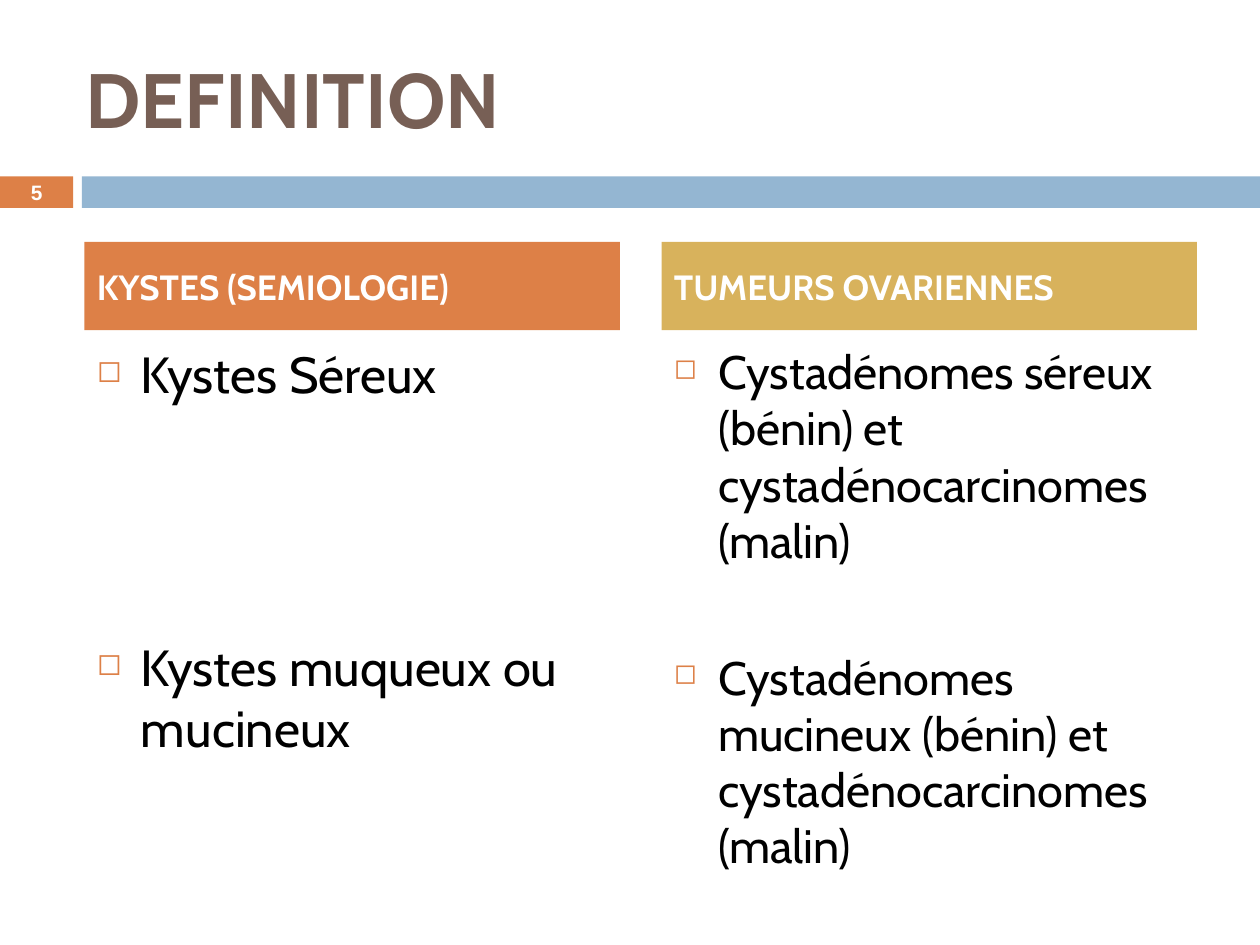
from lxml import etree
from pptx import Presentation
from pptx.dml.color import RGBColor
from pptx.enum.shapes import MSO_SHAPE as Shape
from pptx.enum.text import MSO_ANCHOR as Anchor, PP_ALIGN as Align
from pptx.oxml.ns import qn
from pptx.util import Inches, Pt

ORANGE, BLUE, GOLD = "DD8047", "94B6D2", "D8B25C"
BROWN, BLACK, WHITE = "775F55", "000000", "FFFFFF"

# Heading, heading colour, text size, gap before the second item, items
COLUMNS = [
    ("KYSTES (SEMIOLOGIE)", ORANGE, 29, 132.5,
     ["Kystes Séreux", "Kystes muqueux ou mucineux"]),
    ("TUMEURS OVARIENNES", GOLD, 26.8, 46,
     ["Cystadénomes séreux (bénin) et cystadénocarcinomes (malin)",
      "Cystadénomes mucineux (bénin) et cystadénocarcinomes (malin)"]),
]


def color(hex_code):
    return RGBColor.from_string(hex_code)


def add_bar(slide, left, top, width, height, fill):
    bar = slide.shapes.add_shape(Shape.RECTANGLE, Inches(left), Inches(top),
                                 Inches(width), Inches(height))
    bar.shadow.inherit = False
    bar.fill.solid()
    bar.fill.fore_color.rgb = color(fill)
    bar.line.fill.background()
    return bar


def add_box(slide, left, top, width, height):
    return slide.shapes.add_textbox(Inches(left), Inches(top),
                                    Inches(width), Inches(height))


def write(holder, lines, size, ink, bold=False, font="Cabin",
          anchor=Anchor.MIDDLE, align=Align.LEFT):
    frame = holder.text_frame
    frame.word_wrap = True
    frame.vertical_anchor = anchor
    frame.text = "\n".join(lines)
    for paragraph in frame.paragraphs:
        paragraph.alignment = align
        paragraph.font.name = font
        paragraph.font.size = Pt(size)
        paragraph.font.bold = bold
        paragraph.font.color.rgb = color(ink)
    return frame.paragraphs


def add_bullet(paragraph):
    props = paragraph._p.get_or_add_pPr()
    props.set("marL", str(Inches(0.35)))
    props.set("indent", str(Inches(-0.35)))
    bullet_color = etree.Element(qn("a:buClr"))
    etree.SubElement(bullet_color, qn("a:srgbClr"), val=ORANGE)
    bullet_size = etree.Element(qn("a:buSzPct"), val="60000")
    bullet_char = etree.Element(qn("a:buChar"), char="◻")
    # Bullet settings come before the default run properties
    defaults = props.find(qn("a:defRPr"))
    for part in (bullet_color, bullet_size, bullet_char):
        defaults.addprevious(part)


def add_title(slide, left, top, width, height):
    title = add_box(slide, left, top, width, height)
    write(title, ["DEFINITION"], 44, BROWN, bold=True)


def add_band(slide, left, top, width, height):
    number_width, gap = 0.58, 0.07
    number = add_bar(slide, left, top, number_width, height, ORANGE)
    rule_left = left + number_width + gap
    add_bar(slide, rule_left, top, left + width - rule_left, height, BLUE)
    write(number, ["5"], 11.9, WHITE, bold=True, font="Arial", align=Align.CENTER)


def add_column(slide, left, top, width, height, column):
    heading, fill, size, gap, items = column
    heading_height, body_offset = 0.7, 0.75

    # Coloured heading
    header = add_bar(slide, left, top, width, heading_height, fill)
    write(header, [heading], 20, WHITE, bold=True)[0].space_before = Pt(7)

    # Bulleted items
    body = add_box(slide, left, top + body_offset, width, height - body_offset)
    paragraphs = write(body, items, size, BLACK, anchor=Anchor.TOP)
    for paragraph, space in zip(paragraphs, (7, gap)):
        paragraph.space_before = Pt(space)
        add_bullet(paragraph)


def main():
    deck = Presentation()
    deck.slide_width, deck.slide_height = Inches(10), Inches(7.5)
    slide = deck.slides.add_slide(deck.slide_layouts[6])

    add_band(slide, 0, 1.4, 10, 0.25)
    add_title(slide, 0.58, 0.3, 8.92, 0.95)

    column_width, column_gap = 4.25, 0.33
    for index, column in enumerate(COLUMNS):
        left = 0.67 + index * (column_width + column_gap)
        add_column(slide, left, 1.92, column_width, 4.67, column)

    deck.save("out.pptx")


if __name__ == "__main__":
    main()
